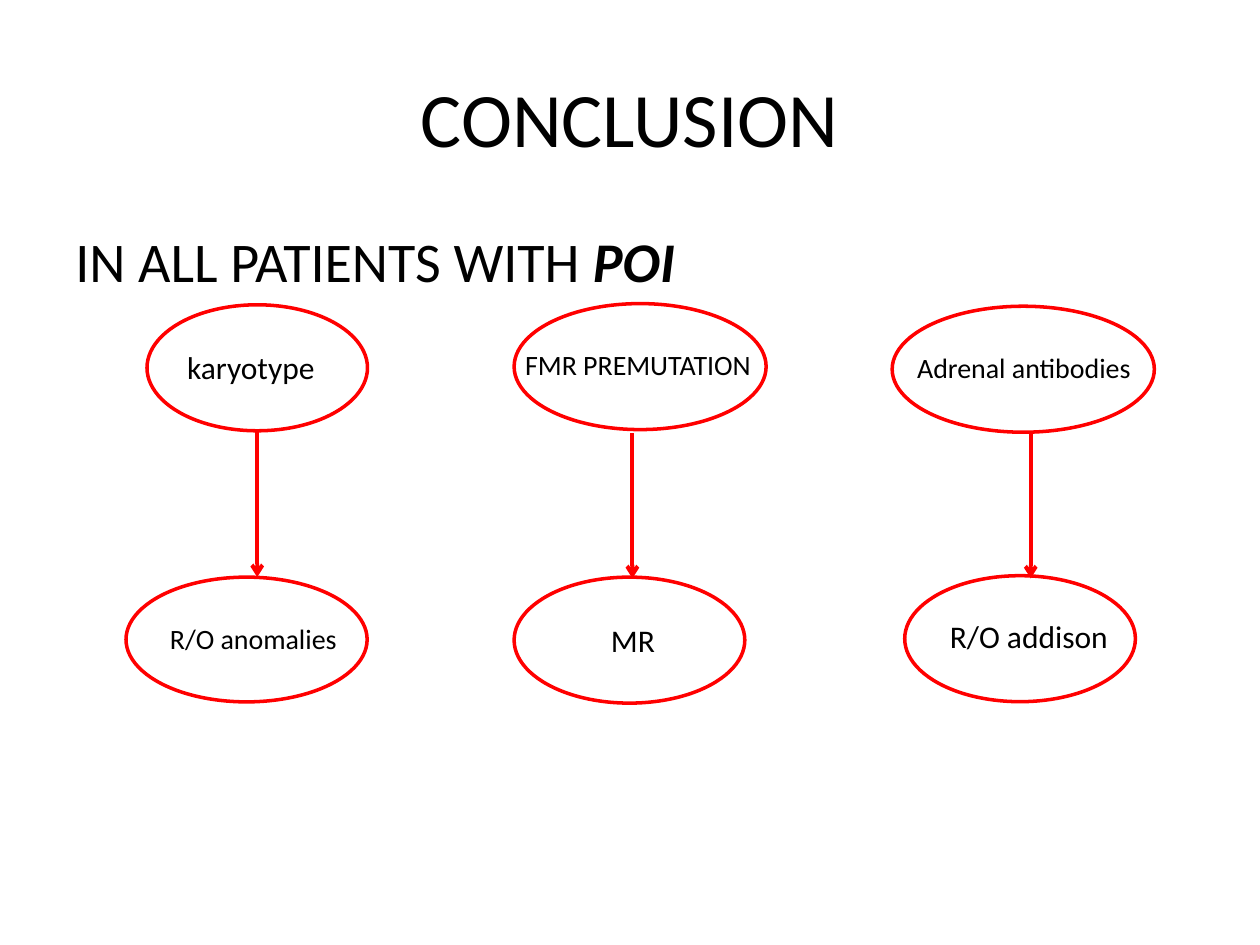
"""Build the conclusion slide: three tests for POI patients and what each rules out."""
import pptx
import pptx.dml.color
import pptx.enum.shapes
import pptx.enum.text
import pptx.oxml
import pptx.oxml.ns
import pptx.util

Pt = pptx.util.Pt
FONT, BLACK, RED = "Calibri", "000000", "FF0000"

TITLE = ["CONCLUSION"]
STATEMENT = ["IN ALL PATIENTS WITH ", "POI"]

# oval: left, top, width, height; label: text, left, top, width, height, size, wrap
PATHWAYS = [
    {
        "test": ((84, 174.2, 126, 72), ("karyotype", 99.8, 195.1, 110, 29, 18, True)),
        "finding": ((72, 329.8, 137.8, 71.3), ("R/O anomalies", 90, 351.4, 113.8, 26.6, 16, True)),
        "arrow": (147, 247),
    },
    {
        "test": ((293.8, 173.5, 144, 72), ("FMR PREMUTATION", 293, 195.1, 145.4, 26.6, 16, False)),
        "finding": ((293.8, 329.8, 131.8, 72), ("MR", 342, 351.4, 39.6, 29, 18, False)),
        "arrow": (361.4, 247.7),
    },
    {
        "test": ((509.8, 175, 149.8, 72), ("Adrenal antibodies", 517, 196.6, 143.3, 26.6, 16, True)),
        "finding": ((517, 329, 131.8, 72), ("R/O addison", 535.7, 349.2, 105.8, 29, 18, False)),
        "arrow": (589, 247.7),
    },
]
ARROW_LENGTH = 82.8


def color(value):
    return pptx.dml.color.RGBColor.from_string(value)


def add_text(slide, pieces, box, size, wrap=True, align="LEFT", anchor="TOP"):
    frame = slide.shapes.add_textbox(*map(Pt, box)).text_frame
    frame.word_wrap = wrap
    frame.vertical_anchor = pptx.enum.text.MSO_ANCHOR[anchor]
    paragraph = frame.paragraphs[0]
    paragraph.alignment = pptx.enum.text.PP_ALIGN[align]
    runs = []
    for piece in pieces:
        run = paragraph.add_run()
        run.text = piece
        runs.append(run)
    paragraph.font.name = FONT
    paragraph.font.size = Pt(size)
    paragraph.font.color.rgb = color(BLACK)
    return runs


def add_oval(slide, box):
    oval = slide.shapes.add_shape(pptx.enum.shapes.MSO_SHAPE.OVAL, *map(Pt, box))
    oval.shadow.inherit = False
    oval.fill.background()
    oval.line.color.rgb = color(RED)
    oval.line.width = Pt(2)


def add_arrow(slide, x, top):
    arrow = slide.shapes.add_connector(
        pptx.enum.shapes.MSO_CONNECTOR.STRAIGHT, Pt(x), Pt(top), Pt(x), Pt(top + ARROW_LENGTH))
    arrow.line.color.rgb = color(RED)
    arrow.line.width = Pt(2.25)
    properties = arrow.element.spPr
    head = pptx.oxml.parse_xml(f'<a:tailEnd {pptx.oxml.ns.nsdecls("a")} type="arrow"/>')
    properties.find(pptx.oxml.ns.qn("a:ln")).append(head)
    properties.append(pptx.oxml.parse_xml(f'<a:effectLst {pptx.oxml.ns.nsdecls("a")}/>'))


def main():
    deck = pptx.Presentation()
    deck.slide_width, deck.slide_height = Pt(720), Pt(540)
    slide = deck.slides.add_slide(deck.slide_layouts[6])

    add_text(slide, TITLE, (36, 21.6, 648, 90), 44, align="CENTER", anchor="MIDDLE")
    condition = add_text(slide, STATEMENT, (36, 126, 648, 356.4), 32)[-1]
    condition.font.bold = condition.font.italic = True

    for pathway in PATHWAYS:
        for oval, (label, *box, size, wrap) in (pathway["test"], pathway["finding"]):
            add_oval(slide, oval)
            add_text(slide, [label], box, size, wrap)
        add_arrow(slide, *pathway["arrow"])

    deck.save("out.pptx")


if __name__ == "__main__":
    main()
